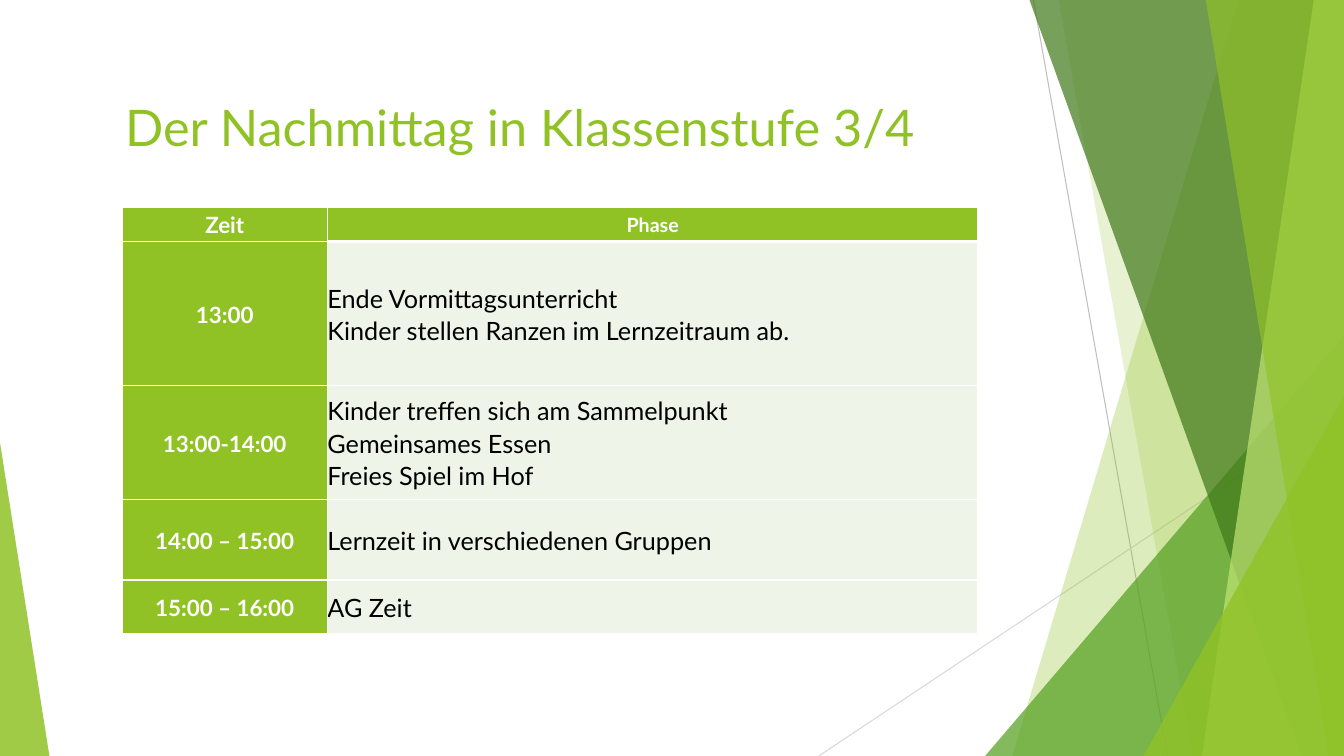
from dataclasses import dataclass

from lxml.etree import SubElement
from pptx import Presentation
from pptx.dml.color import RGBColor
from pptx.enum.shapes import MSO_CONNECTOR
from pptx.enum.text import MSO_ANCHOR, PP_ALIGN
from pptx.oxml import parse_xml
from pptx.oxml.ns import nsdecls, qn
from pptx.util import Inches, Pt


@dataclass(frozen=True)
class Theme:
    font: str = "Lato"
    lime: str = "90C226"
    leaf: str = "54A021"
    forest: str = "3F7819"
    pale: str = "C0E474"
    mist: str = "EEF4E7"
    white: str = "FFFFFF"
    black: str = "000000"
    dark_line: str = "BFBFBF"
    light_line: str = "D9D9D9"
    title_size: int = 36
    phase_size: int = 18
    time_size: int = 16
    phase_head_size: int = 14
    hairline: float = 0.75
    thin_border: int = 1
    thick_border: int = 3
    line_spacing: float = 1.07


@dataclass(frozen=True)
class Box:
    left: int
    top: int
    width: int
    height: int

    def at(self, across, down):
        return (round(self.left + self.width * across / 100),
                round(self.top + self.height * down / 100))

    def region(self, across, down, width, height):
        return Box(*self.at(across, down), round(self.width * width / 100),
                   round(self.height * height / 100))


THEME = Theme()

RAYS = [
    ((40.88, 0), (66.41, 100), THEME.dark_line),
    ((100, 53.73), (0, 100), THEME.light_line),
]
RIBBONS = [
    ([(79.85, 0), (100, 0), (100, 100), (36.85, 100)], THEME.lime, 30),
    ([(45.68, 0), (100, 0), (100, 100), (71.21, 100)], THEME.lime, 20),
    ([(31.67, 100), (100, 44.4), (100, 100)], THEME.leaf, 72),
    ([(40.12, 0), (100, 0), (100, 100), (91.94, 100)], THEME.forest, 70),
    ([(94.24, 0), (100, 0), (100, 100), (72.94, 100)], THEME.pale, 70),
    ([(73.7, 0), (100, 0), (100, 100), (97.12, 100)], THEME.lime, 65),
    ([(61.8, 100), (100, 52.4), (100, 100)], THEME.lime, 80),
]
WEDGE = [(0, 100), (0, 0), (100, 100)]

SCHEDULE = [
    ("Zeit", "Phase", 34),
    ("13:00", "Ende Vormittagsunterricht\vKinder stellen Ranzen im Lernzeitraum ab.", 143),
    ("13:00-14:00", "Kinder treffen sich am Sammelpunkt\nGemeinsames Essen\nFreies Spiel im Hof", 113),
    ("14:00 – 15:00", "Lernzeit in verschiedenen Gruppen", 80),
    ("15:00 – 16:00", "AG Zeit", 53),
]
TIME_SHARE = 24


def rgb(color):
    return RGBColor.from_string(color)


def style_text(frame, size, color, bold=False, align=PP_ALIGN.LEFT, spacing=1.0):
    for paragraph in frame.paragraphs:
        paragraph.alignment = align
        paragraph.line_spacing = spacing
        for run in paragraph.runs:
            run.font.name = THEME.font
            run.font.size = Pt(size)
            run.font.bold = bold
            run.font.color.rgb = rgb(color)


def add_ray(slide, box, start, end, color):
    ray = slide.shapes.add_connector(MSO_CONNECTOR.STRAIGHT, *box.at(*start), *box.at(*end))
    ray.line.color.rgb = rgb(color)
    ray.line.width = Pt(THEME.hairline)
    SubElement(ray._element.spPr, qn("a:effectLst"))


def add_ribbon(slide, box, corners, color, opacity):
    first, *others = [box.at(*corner) for corner in corners]
    outline = slide.shapes.build_freeform(*first)
    outline.add_line_segments(others, close=True)
    ribbon = outline.convert_to_shape()
    ribbon.shadow.inherit = False
    ribbon.line.fill.background()
    ribbon.fill.solid()
    ribbon.fill.fore_color.rgb = rgb(color)
    tint = ribbon._element.spPr.find(".//" + qn("a:srgbClr"))
    SubElement(tint, qn("a:alpha"), val=str(opacity * 1000))


def draw_ribbons(slide, box):
    for start, end, color in RAYS:
        add_ray(slide, box, start, end, color)
    for corners, color, opacity in RIBBONS:
        add_ribbon(slide, box, corners, color, opacity)


def draw_title(slide, box, wording):
    title = slide.shapes.add_textbox(box.left, box.top, box.width, box.height)
    frame = title.text_frame
    frame.word_wrap = True
    frame.vertical_anchor = MSO_ANCHOR.MIDDLE
    frame.margin_left = frame.margin_right = Inches(0.05)
    frame.margin_top = frame.margin_bottom = Inches(0.05)
    frame.text = wording
    style_text(frame, THEME.title_size, THEME.lime)


def border_cell(cell, top, bottom):
    widths = {"L": THEME.thin_border, "R": THEME.thin_border, "T": top, "B": bottom}
    properties = cell._tc.get_or_add_tcPr()
    for index, (side, width) in enumerate(widths.items()):
        properties.insert(index, parse_xml(
            f'<a:ln{side} {nsdecls("a")} w="{Pt(width)}"><a:solidFill>'
            f'<a:srgbClr val="{THEME.white}"/></a:solidFill></a:ln{side}>'))


def fill_cell(cell, wording, fill, size, color, bold, align):
    cell.margin_left = cell.margin_right = cell.margin_top = cell.margin_bottom = 0
    cell.vertical_anchor = MSO_ANCHOR.MIDDLE
    cell.fill.solid()
    cell.fill.fore_color.rgb = rgb(fill)
    cell.text_frame.text = wording
    style_text(cell.text_frame, size, color, bold, align, THEME.line_spacing)


def draw_schedule(slide, box):
    table = slide.shapes.add_table(len(SCHEDULE), 2, box.left, box.top,
                                   box.width, box.height).table
    table.horz_banding = False
    for column, share in zip(table.columns, (TIME_SHARE, 100 - TIME_SHARE)):
        column.width = round(box.width * share / 100)
    total = sum(weight for *_, weight in SCHEDULE)
    for index, (time, phase, weight) in enumerate(SCHEDULE):
        table.rows[index].height = round(box.height * weight / total)
        time_cell, phase_cell = table.cell(index, 0), table.cell(index, 1)
        fill_cell(time_cell, time, THEME.lime, THEME.time_size, THEME.white, True, PP_ALIGN.CENTER)
        if index == 0:
            fill_cell(phase_cell, phase, THEME.lime, THEME.phase_head_size,
                      THEME.white, True, PP_ALIGN.CENTER)
        else:
            fill_cell(phase_cell, phase, THEME.mist, THEME.phase_size,
                      THEME.black, False, PP_ALIGN.LEFT)
        border_cell(time_cell, THEME.thin_border, THEME.thin_border)
        border_cell(phase_cell,
                    THEME.thick_border if index == 1 else THEME.thin_border,
                    THEME.thick_border if index == 0 else THEME.thin_border)


def main():
    deck = Presentation()
    deck.slide_width, deck.slide_height = Inches(13.33), Inches(7.5)
    slide = deck.slides.add_slide(deck.slide_layouts[6])
    page = Box(0, 0, deck.slide_width, deck.slide_height)
    draw_ribbons(slide, page.region(60.92, 0, 39.08, 100))
    add_ribbon(slide, page.region(0, 58.53, 3.68, 41.47), WEDGE, THEME.lime, 85)
    draw_title(slide, page.region(8.93, 11.87, 62.72, 9.73), "Der Nachmittag in Klassenstufe 3/4")
    draw_schedule(slide, page.region(9.08, 27.4, 63.69, 56.4))
    deck.save("out.pptx")


if __name__ == "__main__":
    main()
